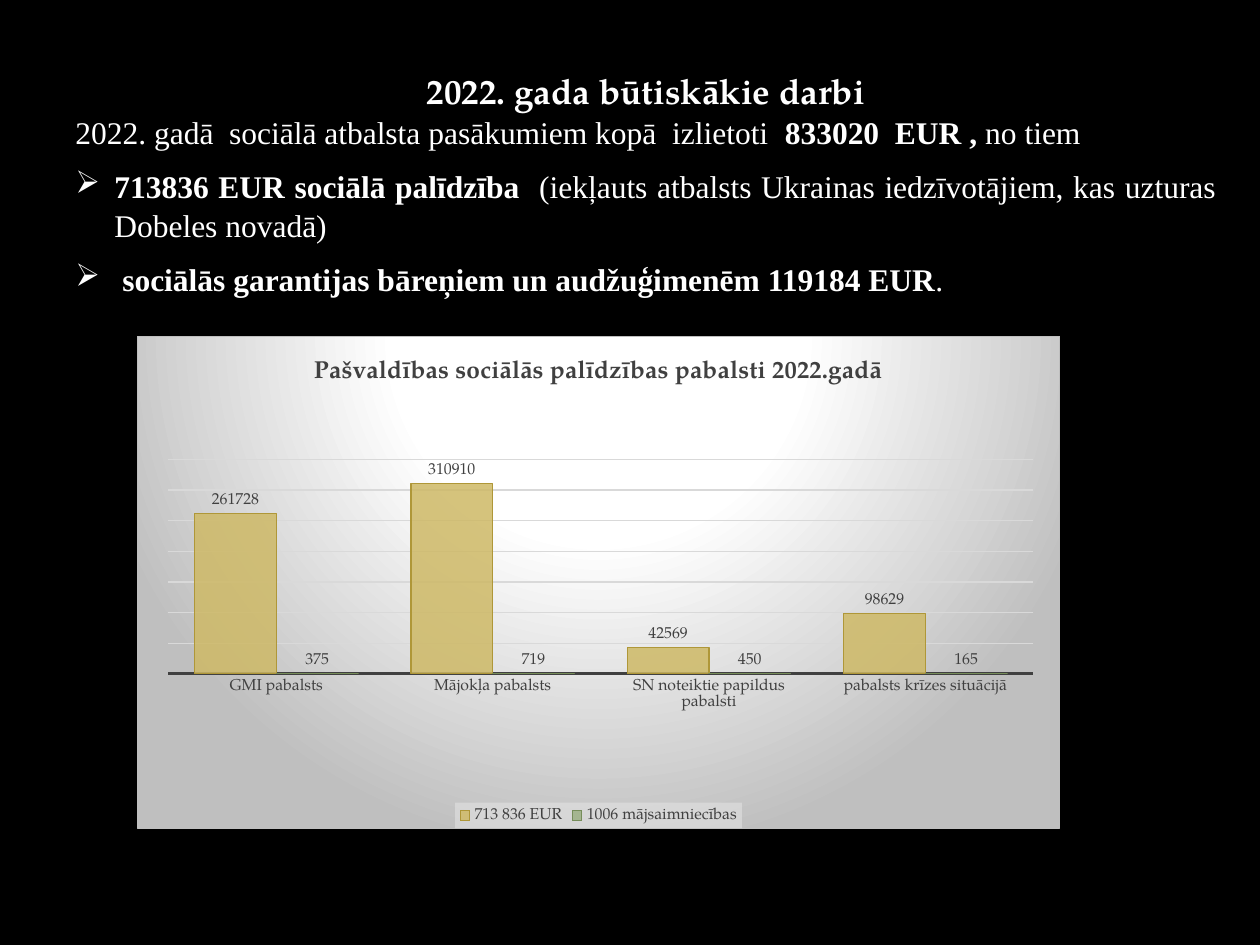
from lxml.etree import SubElement
from pptx import Presentation
from pptx.chart.data import CategoryChartData
from pptx.dml.color import RGBColor
from pptx.enum.chart import XL_CHART_TYPE as ChartType
from pptx.enum.chart import XL_LABEL_POSITION as LabelPosition
from pptx.enum.chart import XL_LEGEND_POSITION as LegendPosition
from pptx.enum.chart import XL_TICK_MARK as TickMark
from pptx.enum.text import PP_ALIGN as Align
from pptx.oxml import parse_xml
from pptx.oxml.ns import nsdecls, qn
from pptx.util import Pt

PX = 914400 // 126
SERIF, BODY = "TeX Gyre Pagella", "Times New Roman"
WHITE, DARK = "FFFFFF", "404040"
rgb = RGBColor.from_string


def set_font(font, name=SERIF, size=9, color=DARK, bold=False):
    font.name, font.size, font.bold = name, Pt(size), bold
    font.color.rgb = rgb(color)


def add_text(paragraph, text, **font_format):
    run = paragraph.add_run()
    run.text = text
    set_font(run.font, **font_format)


presentation = Presentation()
presentation.slide_width, presentation.slide_height = 1260 * PX, 945 * PX
slide = presentation.slides.add_slide(presentation.slide_layouts[6])
slide.background.fill.solid()
slide.background.fill.fore_color.rgb = rgb("000000")

# Heading
text_box = slide.shapes.add_textbox(63 * PX, 42 * PX, 1166 * PX, 819 * PX)
text_frame = text_box.text_frame
text_frame.word_wrap = True
heading = text_frame.paragraphs[0]
heading.alignment, heading.line_spacing = Align.CENTER, 1.5
add_text(heading, "2022. gada būtiskākie darbi", size=20, color=WHITE, bold=True)

# Spending summary: (bulleted, [(text, bold), ...])
summary = [
    (False, [("2022. gadā  sociālā atbalsta pasākumiem kopā  izlietoti  ", False),
             ("833020  EUR ,", True), (" no tiem", False)]),
    (True, [("713836 EUR sociālā palīdzība", True),
            ("  (iekļauts atbalsts Ukrainas iedzīvotājiem, kas uzturas Dobeles novadā)", False)]),
    (True, [(" ", False),
            ("sociālās garantijas bāreņiem un audžuģimenēm 119184 EUR", True), (".", False)]),
]
for bulleted, runs in summary:
    paragraph = text_frame.add_paragraph()
    paragraph.alignment = Align.JUSTIFY
    paragraph.line_spacing, paragraph.space_after = 1.05, Pt(8)
    for text, bold in runs:
        add_text(paragraph, text, name=BODY, size=18, color=WHITE, bold=bold)
    if bulleted:
        properties = paragraph._p.get_or_add_pPr()
        properties.set("marL", str(39 * PX))
        properties.set("indent", str(-39 * PX))
        SubElement(properties, qn("a:buChar"), char="➢")

# Benefits chart
chart_data = CategoryChartData()
chart_data.categories = ["GMI pabalsts", "Mājokļa pabalsts",
                         "SN noteiktie papildus pabalsti", "pabalsts krīzes situācijā"]
chart_data.add_series("713 836 EUR", [261728, 310910, 42569, 98629])
chart_data.add_series("1006 mājsaimniecības", [375, 719, 450, 165])
chart = slide.shapes.add_chart(ChartType.COLUMN_CLUSTERED, 137 * PX, 336 * PX,
                               923 * PX, 493 * PX, chart_data).chart
set_font(chart.font, size=10, color=WHITE)
add_text(chart.chart_title.text_frame.paragraphs[0],
         "Pašvaldības sociālās palīdzības pabalsti 2022.gadā", size=14, bold=True)
chart.chart_title.include_in_layout = False

# Columns and value labels
plot = chart.plots[0]
plot.gap_width, plot.overlap, plot.vary_by_categories = 65, 0, False
for series, fill, line in zip(plot.series, ["CEB966", "9CB084"], ["AF9738", "768D5A"]):
    series.format.fill.solid()
    series.format.fill.fore_color.rgb = rgb(fill)
    color = series.format.fill._xPr.find(".//" + qn("a:srgbClr"))
    SubElement(color, qn("a:alpha"), val="85000")
    series.format.line.color.rgb = rgb(line)
    series.format.line.width = Pt(0.75)
    labels = series.data_labels
    labels.show_value, labels.position = True, LabelPosition.OUTSIDE_END
    set_font(labels.font)

# Axes
category_axis, value_axis = chart.category_axis, chart.value_axis
category_axis.major_tick_mark = TickMark.NONE
category_axis.format.line.color.rgb = rgb(DARK)
category_axis.format.line.width = Pt(1.5)
set_font(category_axis.tick_labels.font)
value_axis.visible = False
value_axis.minimum_scale, value_axis.maximum_scale = 0, 350000
value_axis.major_unit = 50000
value_axis.major_gridlines.format.line.color.rgb = rgb("D9D9D9")
value_axis.major_gridlines.format.line.width = Pt(0.75)

# Legend on a translucent panel
chart.has_legend = True
legend = chart.legend
legend.position, legend.include_in_layout = LegendPosition.BOTTOM, False
set_font(legend.font)
legend._element.find(qn("c:overlay")).addnext(parse_xml(
    f'<c:spPr {nsdecls("c", "a")}><a:solidFill><a:srgbClr val="F2F2F2">'
    '<a:alpha val="39000"/></a:srgbClr></a:solidFill></c:spPr>'))

# Fixed plot area
plot_area = chart.element.find(".//" + qn("c:plotArea"))
for layout in plot_area.findall(qn("c:layout")):
    plot_area.remove(layout)
layout = parse_xml(f'<c:layout {nsdecls("c")}><c:manualLayout/></c:layout>')
for tag, value in [("layoutTarget", "inner"), ("xMode", "edge"), ("yMode", "edge"),
                   ("x", "0.033"), ("y", "0.25"), ("w", "0.939"), ("h", "0.436")]:
    SubElement(layout[0], qn("c:" + tag), val=value)
plot_area.insert(0, layout)

# Chart background: radial gradient and border
stops = "".join(f'<a:gs pos="{position}000"><a:srgbClr val="{color}"/></a:gs>'
                for position, color in [(0, WHITE), (39, WHITE), (100, "BFBFBF")])
chart.element.find(qn("c:chart")).addnext(parse_xml(
    f'<c:spPr {nsdecls("c", "a")}><a:gradFill><a:gsLst>{stops}</a:gsLst>'
    '<a:path path="circle"><a:fillToRect l="50000" t="-80000" r="50000" b="180000"/></a:path>'
    '</a:gradFill><a:ln w="9525"><a:solidFill><a:srgbClr val="BFBFBF"/></a:solidFill></a:ln>'
    '</c:spPr>'))

presentation.save("out.pptx")
